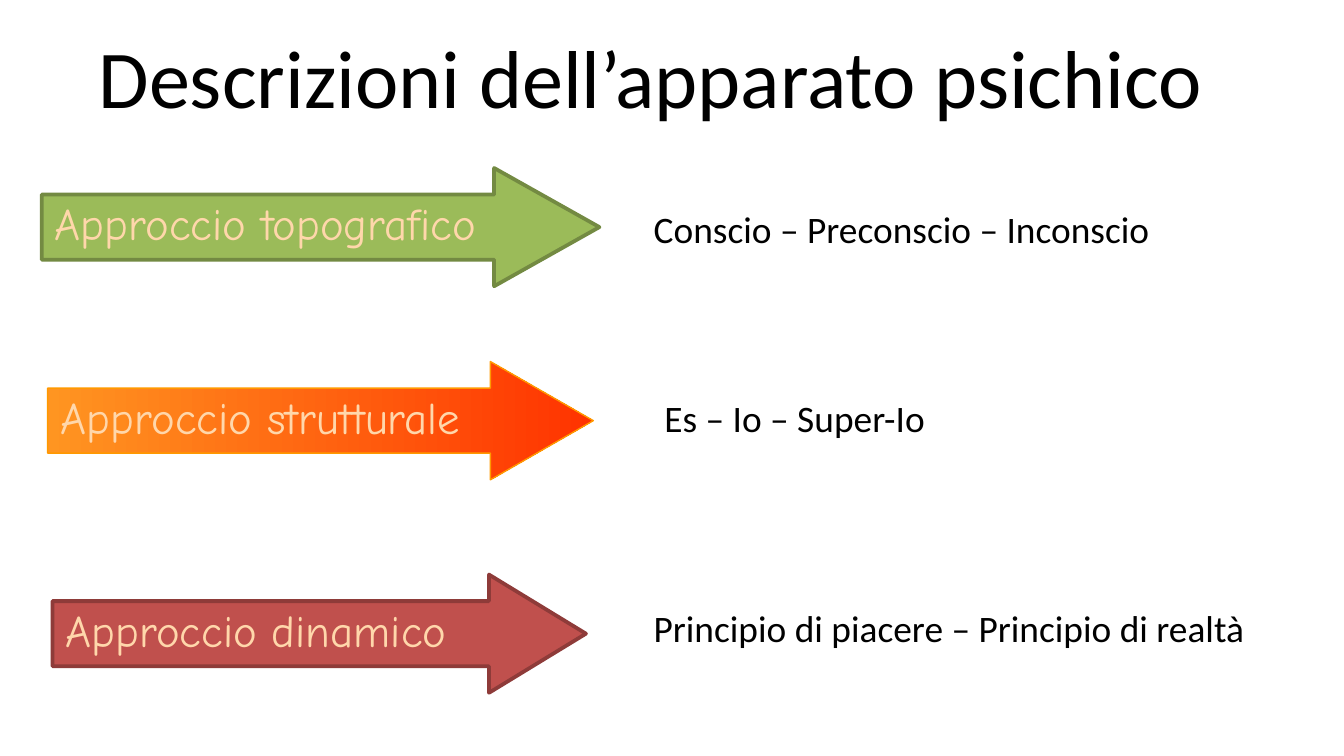
from pptx import Presentation
from pptx.dml.color import RGBColor
from pptx.enum.shapes import MSO_SHAPE
from pptx.enum.text import MSO_ANCHOR, MSO_AUTO_SIZE, PP_ALIGN
from pptx.util import Pt

PX = 4572
RIGHT_ARROW = MSO_SHAPE.RIGHT_ARROW
MIDDLE, TOP = MSO_ANCHOR.MIDDLE, MSO_ANCHOR.TOP
GROW = MSO_AUTO_SIZE.SHAPE_TO_FIT_TEXT
LEFT, CENTER = PP_ALIGN.LEFT, PP_ALIGN.CENTER
TITLE_ONLY = 5
ARROW_HEIGHT, TEXT_HEIGHT = 176, 88

COLORS = {
    "black": "000000",
    "label": "FFD7AB",
    "green": "9BBB59",
    "green edge": "738A42",
    "orange": "FF9521",
    "orange red": "FF3300",
    "orange edge": "FF9900",
    "red": "C0504D",
    "red edge": "8E3B39",
}

APPROACHES = [
    ("Approccio topografico", (62, 250, 830), 0.89, ["green"], "green edge", 2,
     "Conscio – Preconscio – Inconscio", (953, 297, 950), 24),
    ("Approccio strutturale", (71, 538, 812), 0.87, ["orange", "orange red"], "orange edge", 0.75,
     "Es – Io – Super-Io", (969, 578, 614), None),
    ("Approccio dinamico", (78, 855, 794), 0.82, ["red"], "red edge", 2,
     "Principio di piacere – Principio di realtà", (953, 891, 1116), 24),
]


def color(name):
    return RGBColor.from_string(COLORS[name])


def emu(*lengths):
    return [length * PX for length in lengths]


def write(shape, text, font_name, size, color_name, alignment=LEFT, line_spacing=None):
    shape.text_frame.word_wrap = True
    paragraph = shape.text_frame.paragraphs[0]
    paragraph.text = text
    paragraph.alignment = alignment
    if line_spacing:
        paragraph.line_spacing = Pt(line_spacing)
    paragraph.font.name = font_name
    paragraph.font.size = Pt(size)
    paragraph.font.color.rgb = color(color_name)


def add_title(slide, text, box):
    title = slide.shapes.title
    title.left, title.top, title.width, title.height = emu(*box)
    write(title, text, "Calibri", 44, "black", CENTER)
    frame = title.text_frame
    frame.vertical_anchor = TOP
    frame.margin_left, frame.margin_top, frame.margin_right = emu(0, 7, 0)


def add_arrow(slide, text, box, head, fills, edge, edge_width):
    arrow = slide.shapes.add_shape(RIGHT_ARROW, *emu(*box))
    arrow.shadow.inherit = False
    arrow.adjustments[0] = 0.55
    arrow.adjustments[1] = head
    if len(fills) == 1:
        arrow.fill.solid()
        arrow.fill.fore_color.rgb = color(fills[0])
    else:
        arrow.fill.gradient()
        arrow.fill.gradient_angle = 0
        for stop, name in zip(arrow.fill.gradient_stops, fills):
            stop.color.rgb = color(name)
    arrow.line.color.rgb = color(edge)
    arrow.line.width = Pt(edge_width)
    write(arrow, text, "Comic Neue", 24, "label", line_spacing=24)
    arrow.text_frame.vertical_anchor = MIDDLE


def add_description(slide, text, box, line_spacing):
    description = slide.shapes.add_textbox(*emu(*box))
    write(description, text, "Calibri", 20, "black", line_spacing=line_spacing)
    description.text_frame.auto_size = GROW


def main():
    presentation = Presentation()
    presentation.slide_width, presentation.slide_height = emu(2000, 1125)
    slide = presentation.slides.add_slide(presentation.slide_layouts[TITLE_ONLY])
    add_title(slide, "Descrizioni dell’apparato psichico", (125, 32, 1688, 172))
    for label, arrow_box, head, fills, edge, edge_width, text, text_box, spacing in APPROACHES:
        add_arrow(slide, label, (*arrow_box, ARROW_HEIGHT), head, fills, edge, edge_width)
        add_description(slide, text, (*text_box, TEXT_HEIGHT), spacing)
    presentation.save("out.pptx")


if __name__ == "__main__":
    main()
